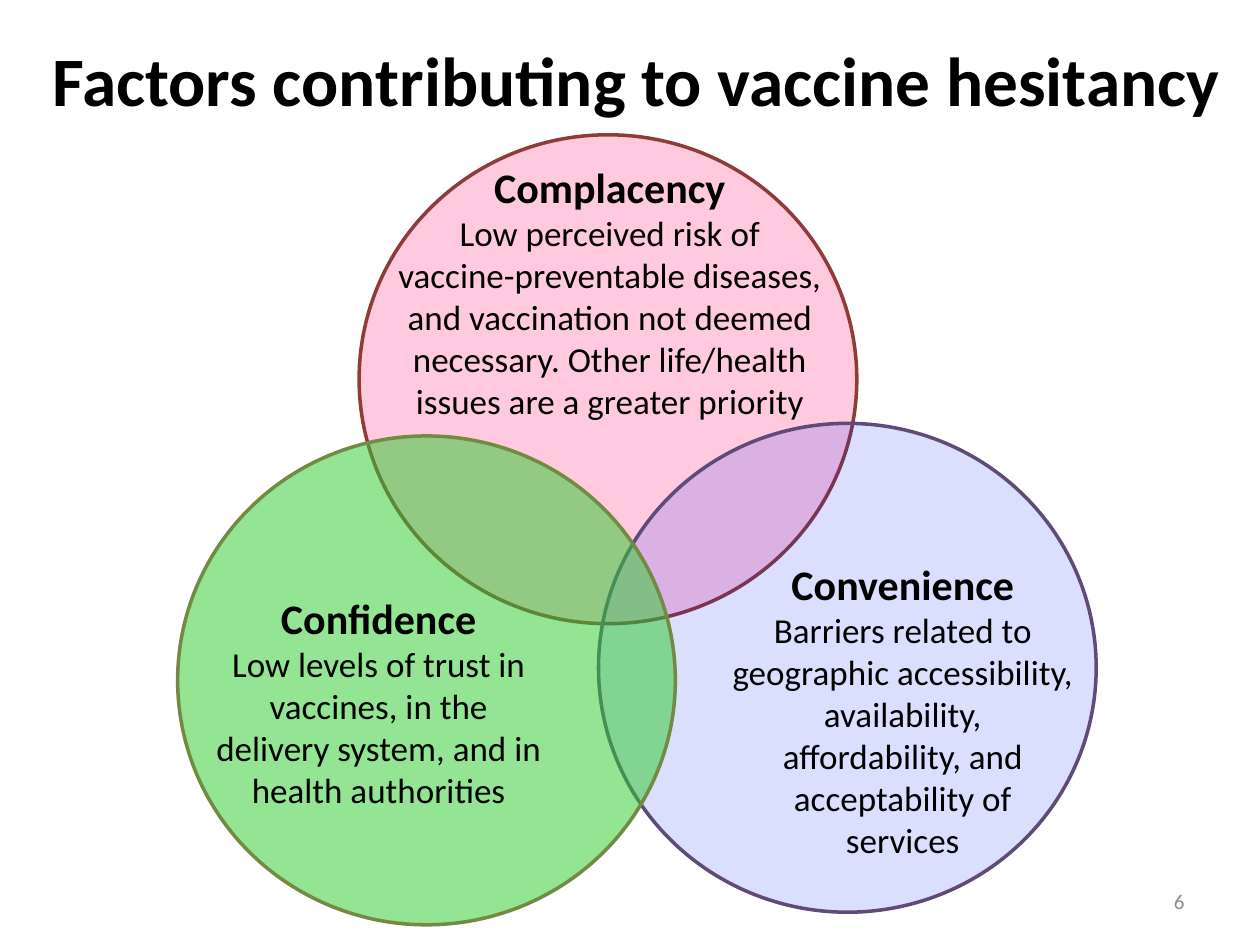
"""Build a slide with a three-circle diagram of vaccine hesitancy factors."""
import pptx
import pptx.dml.color
import pptx.enum.shapes
import pptx.enum.text
import pptx.oxml.ns
import pptx.util
from lxml import etree

Inches, Pt = pptx.util.Inches, pptx.util.Pt
RGBColor = pptx.dml.color.RGBColor
ALIGN = pptx.enum.text.PP_ALIGN
ANCHOR = pptx.enum.text.MSO_ANCHOR

BLACK = RGBColor(0x00, 0x00, 0x00)
GREY = RGBColor(0x8C, 0x8C, 0x8C)
PINK, MAROON = RGBColor(0xFF, 0x00, 0x66), RGBColor(0x8E, 0x3B, 0x39)
BLUE, PURPLE = RGBColor(0x00, 0x1E, 0xFE), RGBColor(0x5F, 0x4A, 0x78)
GREEN, OLIVE = RGBColor(0x33, 0xCC, 0x33), RGBColor(0x73, 0x8A, 0x42)

SLIDE = (10, 7.5)
CIRCLE = (3.95, 3.88)
TITLE = "Factors contributing to vaccine hesitancy"
TITLE_BOX = (0.05, 0, SLIDE[0], SLIDE[1] / 6)
NUMBER = "6"
NUMBER_BOX = (7.17, 6.95, 2.33, 0.4)

TITLE_FONT = {"name": "Calibri", "size": Pt(39.6), "bold": True}
HEAD_FONT = {"name": "Calibri", "size": Pt(24), "bold": True}
BODY_FONT = {"name": "Calibri", "size": Pt(20), "bold": False}
NUMBER_FONT = {"name": "Calibri", "size": Pt(12), "bold": False}

FACTORS = [
    {"head": "Complacency",
     "body": "Low perceived risk of\vvaccine-preventable diseases, and vaccination not deemed "
             "necessary. Other life/health issues are a greater priority",
     "corner": (2.85, 1.07), "box": (2.94, 1.23, 3.8, 2.86),
     "fill": PINK, "opacity": 21, "line": MAROON},
    {"head": "Convenience",
     "body": "Barriers related to geographic accessibility, availability, "
             "affordability, and acceptability of\vservices",
     "corner": (4.75, 3.36), "box": (5.71, 4.38, 2.91, 2.52),
     "fill": BLUE, "opacity": 14, "line": PURPLE},
    {"head": "Confidence",
     "body": "Low levels of trust in vaccines, in the\vdelivery system, and in\vhealth authorities",
     "corner": (1.41, 3.46), "box": (1.56, 4.65, 2.89, 1.85),
     "fill": GREEN, "opacity": 53, "line": OLIVE},
]


def inches(box):
    return [Inches(v) for v in box]


def write(tf, lines, align=ALIGN.CENTER, anchor=ANCHOR.TOP, color=BLACK):
    tf.word_wrap = True
    tf.auto_size = pptx.enum.text.MSO_AUTO_SIZE.NONE
    tf.vertical_anchor = anchor
    for i, (text, font) in enumerate(lines):
        p = tf.paragraphs[0] if i == 0 else tf.add_paragraph()
        p.text = text
        p.alignment = align
        for r in p.runs:
            r.font.color.rgb = color
            for key, value in font.items():
                setattr(r.font, key, value)


def add_circle(shapes, factor):
    sp = shapes.add_shape(pptx.enum.shapes.MSO_SHAPE.OVAL, *inches(factor["corner"] + CIRCLE))
    sp.shadow.inherit = False
    sp.fill.solid()
    sp.fill.fore_color.rgb = factor["fill"]
    qn = pptx.oxml.ns.qn
    color = sp.element.spPr.find(qn("a:solidFill")).find(qn("a:srgbClr"))
    etree.SubElement(color, qn("a:alpha"), val=str(factor["opacity"] * 1000))
    sp.line.color.rgb = factor["line"]
    sp.line.width = Pt(2)


def main():
    prs = pptx.Presentation()
    prs.slide_width, prs.slide_height = inches(SLIDE)
    s = prs.slides.add_slide(prs.slide_layouts[5])

    title = s.shapes.title
    title.left, title.top, title.width, title.height = inches(TITLE_BOX)
    write(title.text_frame, [(TITLE, TITLE_FONT)], anchor=ANCHOR.MIDDLE)

    diagram = s.shapes.add_group_shape()
    for factor in FACTORS:
        add_circle(diagram.shapes, factor)
        label = diagram.shapes.add_textbox(*inches(factor["box"]))
        write(label.text_frame, [(factor["head"], HEAD_FONT), (factor["body"], BODY_FONT)])

    number = s.shapes.add_textbox(*inches(NUMBER_BOX))
    write(number.text_frame, [(NUMBER, NUMBER_FONT)], ALIGN.RIGHT, ANCHOR.MIDDLE, GREY)
    prs.save("out.pptx")


if __name__ == "__main__":
    main()
